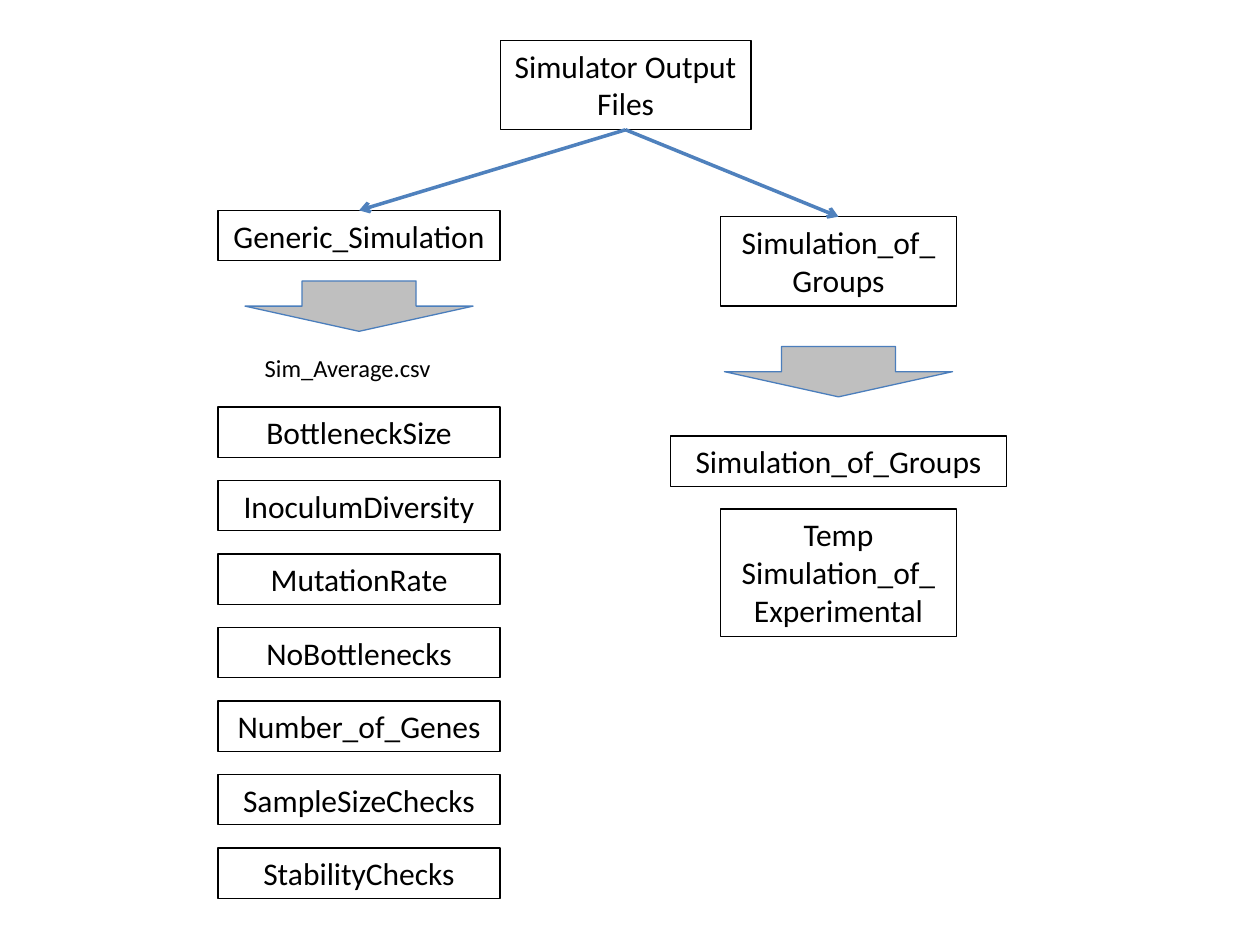
import pptx
import pptx.util
import pptx.dml.color
import pptx.enum.shapes
import pptx.enum.text
import pptx.oxml
import pptx.oxml.ns
from pptx.util import Inches

BLACK, BLUE, EDGE, GREY = "000000", "4F81BD", "4B7EBC", "BFBFBF"
ROW_HEIGHT = 0.4
ROW_PITCH = 3.5 / 6
GENERIC_FOLDERS = ["BottleneckSize", "InoculumDiversity", "MutationRate", "NoBottlenecks",
                   "Number_of_Genes", "SampleSizeChecks", "StabilityChecks"]


def color(hex_value):
    """Turn a hex string into a colour."""
    return pptx.dml.color.RGBColor.from_string(hex_value)


def add_label(slide, text, left, top, width, height, size=18, outline=BLACK):
    """Add centred text, one paragraph per line, framed if an outline is given."""
    label = slide.shapes.add_textbox(Inches(left), Inches(top), Inches(width), Inches(height))
    if outline:
        label.line.color.rgb = color(outline)
        label.line.width = pptx.util.Pt(0.75)
    frame = label.text_frame
    frame.word_wrap = True
    frame.auto_size = pptx.enum.text.MSO_AUTO_SIZE.SHAPE_TO_FIT_TEXT
    frame.text = text
    for paragraph in frame.paragraphs:
        paragraph.alignment = pptx.enum.text.PP_ALIGN.CENTER
        paragraph.font.name = "Calibri"
        paragraph.font.size = pptx.util.Pt(size)
        paragraph.font.color.rgb = color(BLACK)
    return label


def add_block_arrow(slide, center, top, width=1.81):
    """Add a grey downward arrow centred on a column."""
    arrow = slide.shapes.add_shape(pptx.enum.shapes.MSO_SHAPE.DOWN_ARROW, Inches(center - width / 2),
                                   Inches(top), Inches(width), Inches(ROW_HEIGHT))
    arrow.shadow.inherit = False
    arrow.fill.solid()
    arrow.fill.fore_color.rgb = color(GREY)
    arrow.line.color.rgb = color(EDGE)
    arrow.line.width = pptx.util.Pt(0.75)


def add_branch(slide, parent, child):
    """Join the bottom of the parent to the top of the child with an arrow."""
    branch = slide.shapes.add_connector(pptx.enum.shapes.MSO_CONNECTOR.STRAIGHT, 0, 0, 0, 0)
    branch.begin_connect(parent, 2)
    branch.end_connect(child, 0)
    branch.line.color.rgb = color(BLUE)
    branch.line.width = pptx.util.Pt(2)
    head = pptx.oxml.parse_xml(f'<a:tailEnd {pptx.oxml.ns.nsdecls("a")} type="arrow"/>')
    branch.line._get_or_add_ln().append(head)
    properties = branch._element.spPr
    properties.append(pptx.oxml.parse_xml(f'<a:effectLst {pptx.oxml.ns.nsdecls("a")}/>'))


def add_generic_column(slide, left, top, width):
    """Add the generic simulation column and return its heading."""
    heading = add_label(slide, "Generic_Simulation", left, top, width, ROW_HEIGHT)
    add_block_arrow(slide, left + width / 2, top + 0.56)
    add_label(slide, "Sim_Average.csv", left + 0.25, top + 1.08, 1.56, 0.34, size=14, outline=None)
    for row, folder in enumerate(GENERIC_FOLDERS):
        add_label(slide, folder, left, top + 1.56 + row * ROW_PITCH, width, ROW_HEIGHT)
    return heading


def add_groups_column(slide, left, top, width):
    """Add the simulation of groups column and return its heading."""
    center = left + width / 2
    wide = 2.67
    heading = add_label(slide, "Simulation_of_Groups", left, top, width, 0.71)
    add_block_arrow(slide, center, top + 1.03)
    add_label(slide, "Simulation_of_Groups", center - wide / 2, top + 1.74, wide, ROW_HEIGHT)
    add_label(slide, "Temp\nSimulation_of_\nExperimental", left, top + 2.32, width, 1.01)
    return heading


def main():
    """Build the slide and save it."""
    deck = pptx.Presentation()
    deck.slide_width, deck.slide_height = Inches(10), Inches(7.5)
    slide = deck.slides.add_slide(deck.slide_layouts[6])
    root = add_label(slide, "Simulator Output Files", 3.97, 0.32, 1.99, 0.71)
    generic = add_generic_column(slide, 1.73, 1.67, 2.24)
    groups = add_groups_column(slide, 5.72, 1.72, 1.87)
    for child in (generic, groups):
        add_branch(slide, root, child)
    deck.save("out.pptx")


if __name__ == "__main__":
    main()
